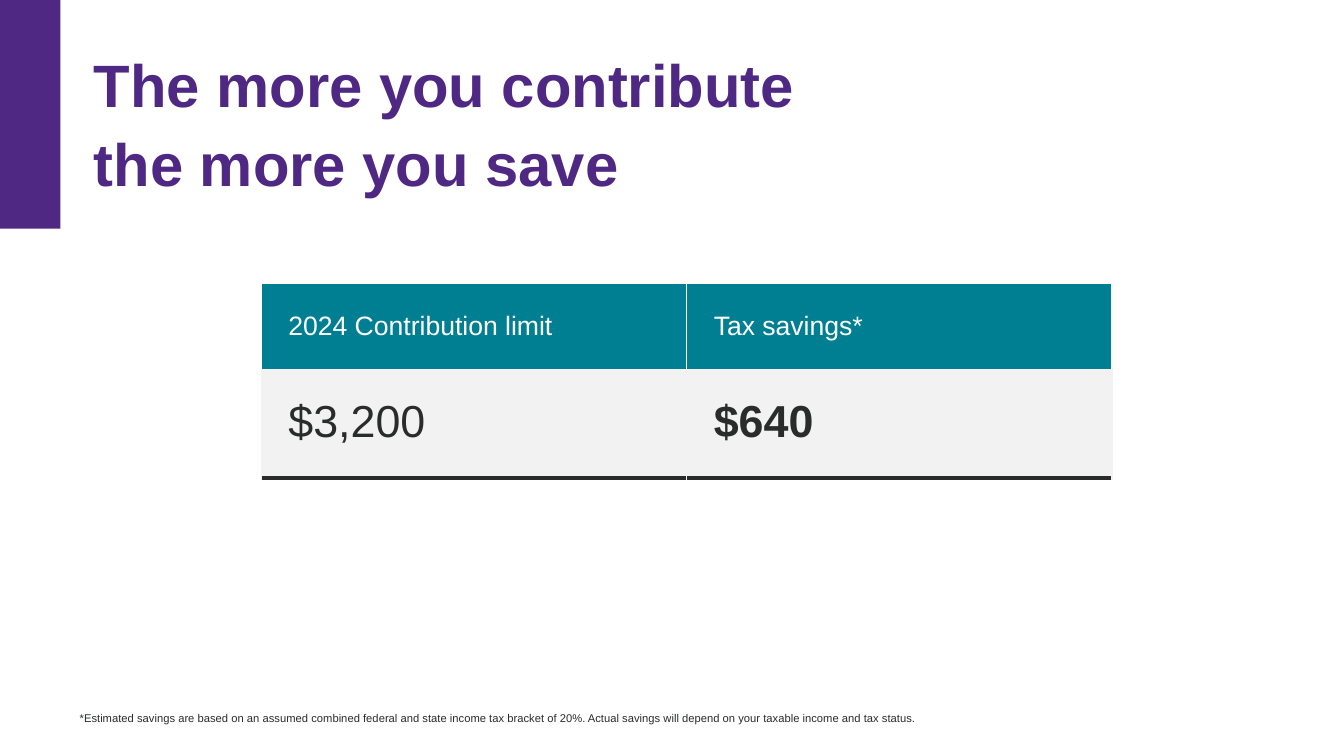
from lxml import etree
from pptx import Presentation
from pptx.dml.color import RGBColor
from pptx.enum.shapes import MSO_SHAPE
from pptx.enum.text import MSO_ANCHOR
from pptx.oxml.ns import qn
from pptx.util import Inches, Pt

RECT = MSO_SHAPE.RECTANGLE
TOP, MIDDLE = MSO_ANCHOR.TOP, MSO_ANCHOR.MIDDLE
PURPLE, TEAL, INK, PALE, WHITE = "4F2883", "007F93", "2A2C2C", "F2F2F2", "FFFFFF"


def color(code):
    return RGBColor.from_string(code)


class Deck:
    """Holds the font and the current slide, and draws each kind of element."""

    def __init__(self, font):
        self.font = font
        self.prs = Presentation()
        self.prs.slide_width = Inches(13.33)
        self.prs.slide_height = Inches(7.5)
        self.slide = self.prs.slides.add_slide(self.prs.slide_layouts[6])

    def label(self, par, text, size, ink, bold=False):
        par.text = text
        par.font.name = self.font
        par.font.size = Pt(size)
        par.font.bold = bold
        par.font.color.rgb = color(ink)

    def bar(self, box, fill):
        shape = self.slide.shapes.add_shape(RECT, *map(Inches, box))
        shape.shadow.inherit = False
        shape.fill.solid()
        shape.fill.fore_color.rgb = color(fill)
        shape.line.fill.background()

    def text(self, box, text, size, ink, space, bold=False):
        frame = self.slide.shapes.add_textbox(*map(Inches, box)).text_frame
        frame.word_wrap = True
        frame.margin_left = frame.margin_right = 0
        frame.margin_top = frame.margin_bottom = 0
        par = frame.paragraphs[0]
        self.label(par, text, size, ink, bold)
        par.line_spacing = space

    def edge(self, cell, side, ink, width):
        props = cell._tc.get_or_add_tcPr()
        line = etree.SubElement(props, qn(f"a:ln{side}"), w=str(Pt(width)))
        fill = etree.SubElement(line, qn("a:solidFill"))
        etree.SubElement(fill, qn("a:srgbClr"), val=ink)

    def cell(self, cell, text, size, ink, fill, edges, anchor, bold=False):
        cell.margin_left = cell.margin_right = Inches(0.27)
        cell.margin_top = cell.margin_bottom = Inches(0.27)
        cell.vertical_anchor = anchor
        for side, (tint, width) in zip("LRTB", edges):
            self.edge(cell, side, tint, width)
        cell.fill.solid()
        cell.fill.fore_color.rgb = color(fill)
        self.label(cell.text_frame.paragraphs[0], text, size, ink, bold)

    def table(self, box, heights, heads, values):
        grid = self.slide.shapes.add_table(2, len(heads), *map(Inches, box)).table
        for row, height in zip(grid.rows, heights):
            row.height = Inches(height)
        upper = [(WHITE, 1)] * 3 + [(PALE, 1)]
        lower = [(PALE, 1)] * 3 + [(INK, 3)]
        for col, (head, value) in enumerate(zip(heads, values)):
            self.cell(grid.cell(0, col), head, 19, WHITE, TEAL, upper, MIDDLE)
            self.cell(grid.cell(1, col), value, 32, INK, PALE, lower, TOP, col == 1)


def main():
    deck = Deck("Arial")
    deck.bar((0, 0, 0.6, 2.27), PURPLE)
    deck.text((0.93, 0.4, 7.42, 1.52), "The more you contribute the more you save",
              42.7, PURPLE, 1.1, True)
    deck.text((0.79, 7.02, 11.75, 0.16),
              "*Estimated savings are based on an assumed combined federal and state "
              "income tax bracket of 20%. Actual savings will depend on your taxable "
              "income and tax status.", 8, INK, 1.3)
    deck.table((2.59, 2.81, 8.44, 1.91), (0.84, 1.07),
               ("2024 Contribution limit", "Tax savings*"), ("$3,200", "$640"))
    deck.prs.save("out.pptx")


if __name__ == "__main__":
    main()
